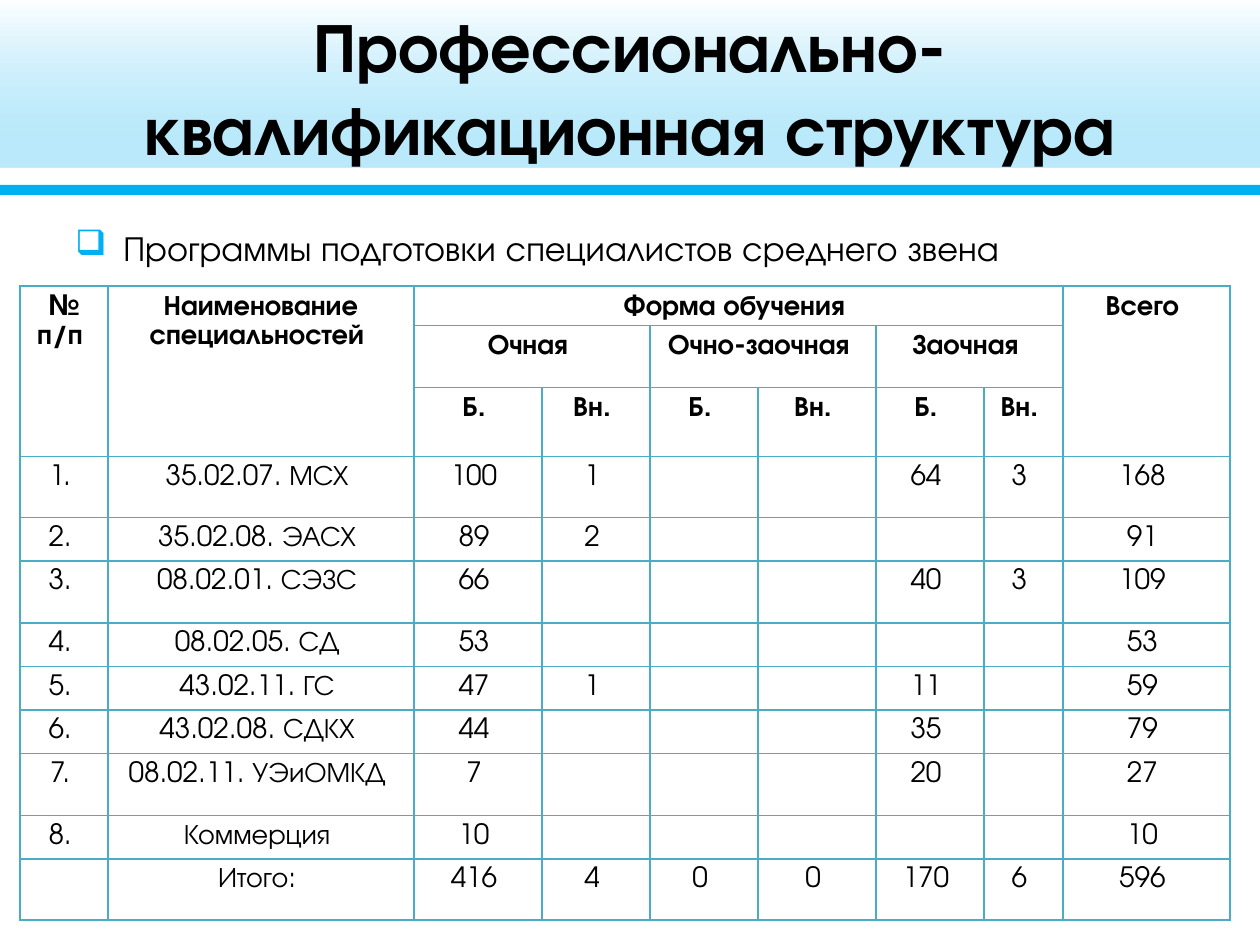
import pptx
import pptx.util
import pptx.dml.color
import pptx.enum.shapes
import pptx.enum.text
import pptx.oxml
import pptx.oxml.ns
from lxml import etree

PX = 914400 / 126
FONT = "TeX Gyre Adventor"
COLORS = {"text": "000000", "white": "FFFFFF", "accent": "00B0F0", "border": "4BACC6"}


def px(n):
    return pptx.util.Emu(round(n * PX))


def rgb(name):
    return pptx.dml.color.RGBColor.from_string(COLORS[name])


def add_xml(parent, tag, **attrs):
    return etree.SubElement(parent, pptx.oxml.ns.qn(tag), **attrs)


class Deck:
    def __init__(self, width, height):
        self.prs = pptx.Presentation()
        self.prs.slide_width, self.prs.slide_height = px(width), px(height)
        self.s = self.prs.slides.add_slide(self.prs.slide_layouts[6])

    def rect(self, x, y, w, h):
        sp = self.s.shapes.add_shape(
            pptx.enum.shapes.MSO_SHAPE.RECTANGLE, px(x), px(y), px(w), px(h))
        sp.shadow.inherit = False
        sp.line.fill.background()
        return sp

    def bar(self, x, y, w, h, color):
        fill = self.rect(x, y, w, h).fill
        fill.solid()
        fill.fore_color.rgb = rgb(color)

    def gradient(self, x, y, w, h, stops):
        sp = self.rect(x, y, w, h)
        sp.fill.gradient()
        sp.fill.gradient_angle = 270
        for stop, (position, color, _) in zip(sp.fill.gradient_stops, stops):
            stop.position = position
            stop.color.rgb = rgb(color)
        tags = sp._element.spPr.iter(pptx.oxml.ns.qn("a:srgbClr"))
        for tag, (_, _, alpha) in zip(tags, stops):
            add_xml(tag, "a:alpha", val=str(alpha * 1000))

    def font(self, p, size, bold=False):
        p.font.name, p.font.size, p.font.bold = FONT, pptx.util.Pt(size), bold
        p.font.color.rgb = rgb("text")

    def text(self, x, y, w, h, text, size, bold=False, align="LEFT", anchor="TOP", bullet=None):
        tf = self.s.shapes.add_textbox(px(x), px(y), px(w), px(h)).text_frame
        tf.word_wrap = True
        tf.vertical_anchor = pptx.enum.text.MSO_ANCHOR[anchor]
        p = tf.paragraphs[0]
        p.text = text
        p.alignment = pptx.enum.text.PP_ALIGN[align]
        if bullet:
            pPr = p._p.get_or_add_pPr()
            pPr.set("marL", str(px(48)))
            pPr.set("indent", str(px(-48)))
            add_xml(add_xml(pPr, "a:buClr"), "a:srgbClr", val=COLORS["accent"])
            add_xml(pPr, "a:buFont", typeface="Wingdings", charset="2")
            add_xml(pPr, "a:buChar", char=bullet)
        self.font(p, size, bold)

    def cell(self, cell, text, size, bold):
        cell.margin_left = cell.margin_right = px(10)
        cell.margin_top = cell.margin_bottom = px(5)
        tcPr = cell._tc.get_or_add_tcPr()
        for side in ("a:lnL", "a:lnR", "a:lnT", "a:lnB"):
            ln = add_xml(tcPr, side, w=str(pptx.util.Pt(1)))
            add_xml(add_xml(ln, "a:solidFill"), "a:srgbClr", val=COLORS["border"])
        cell.fill.background()
        p = cell.text_frame.paragraphs[0]
        p.alignment = pptx.enum.text.PP_ALIGN.CENTER
        p.line_spacing = pptx.util.Pt(16.8)
        if text:
            p.text = text + " "
        else:
            add_xml(p._p, "a:endParaRPr", sz=str(size * 100))
        self.font(p, size, bold)

    def table(self, x, y, widths, heights, rows, merges, size, header_rows):
        table = self.s.shapes.add_table(
            len(rows), len(widths), px(x), px(y), px(sum(widths)), px(sum(heights))).table
        table.first_row = table.horz_banding = False
        for column, width in zip(table.columns, widths):
            column.width = px(width)
        for row, height in zip(table.rows, heights):
            row.height = px(height)
        for i, row in enumerate(rows):
            for j, text in enumerate(row):
                self.cell(table.cell(i, j), text, size, i < header_rows)
        for first, last in merges:
            table.cell(*first).merge(table.cell(*last))


COLUMNS = [88, 306, 128, 108, 108, 118, 108, 79, 167]
ROW_HEIGHTS = [39, 62, 69, 61, 40, 62, 40, 39, 40, 62, 40, 61]
ROWS = [
    ["№ п/п", "Наименование специальностей", "Форма обучения", "", "", "", "", "", "Всего"],
    ["", "", "Очная", "", "Очно-заочная", "", "Заочная", "", ""],
    ["", "", "Б.", "Вн.", "Б.", "Вн.", "Б.", "Вн.", ""],
    ["1.", "35.02.07. МСХ", "100", "1", "", "", "64", "3", "168"],
    ["2.", "35.02.08. ЭАСХ", "89", "2", "", "", "", "", "91"],
    ["3.", "08.02.01. СЭЗС", "66", "", "", "", "40", "3", "109"],
    ["4.", "08.02.05. СД", "53", "", "", "", "", "", "53"],
    ["5.", "43.02.11. ГС", "47", "1", "", "", "11", "", "59"],
    ["6.", "43.02.08. СДКХ", "44", "", "", "", "35", "", "79"],
    ["7.", "08.02.11. УЭиОМКД", "7", "", "", "", "20", "", "27"],
    ["8.", "Коммерция", "10", "", "", "", "", "", "10"],
    ["", "Итого:", "416", "4", "0", "0", "170", "6", "596"],
]
MERGES = [((0, j), (2, j)) for j in (0, 1, 8)]
MERGES += [((0, 2), (0, 7))] + [((1, j), (1, j + 1)) for j in (2, 4, 6)]


def main():
    deck = Deck(1260, 945)
    # Header band and rule
    deck.bar(0, 185, 1275, 10, "accent")
    deck.gradient(0, 0, 1275, 168, [(0, "white", 46), (0.84, "accent", 27)])
    # Title and subtitle
    deck.text(63, 7, 1134, 158, "Профессионально-квалификационная структура", 39.6,
              bold=True, align="CENTER", anchor="MIDDLE")
    deck.text(63, 220, 1134, 56, "Программы подготовки специалистов среднего звена", 20,
              bullet="q")
    # Table of specialities
    deck.table(20, 286, COLUMNS, ROW_HEIGHTS, ROWS, MERGES, size=16, header_rows=3)
    deck.prs.save("out.pptx")


if __name__ == "__main__":
    main()
